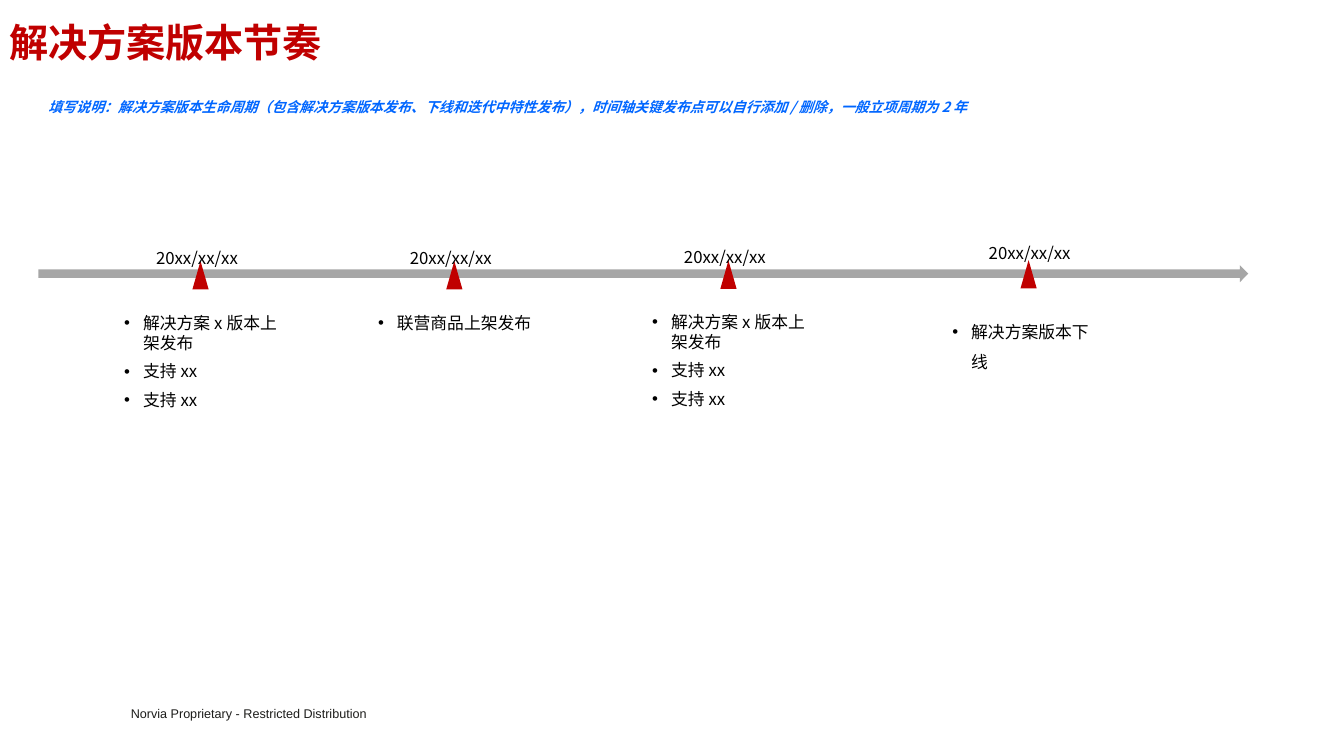
from pptx import Presentation
from pptx import util as u
from pptx.dml.color import RGBColor
from pptx.enum import shapes, text
from pptx.oxml.ns import qn
from lxml import etree

Pt = u.Pt
COLORS = {"red": "C00000", "gray": "A6A6A6", "blue": "0066FF",
          "black": "000000", "ink": "1D1D1B"}
CJK = "Noto Sans CJK SC"
BULLET_INDENT = Pt(13.5)
RELEASE = ["解决方案x版本上架发布", "支持xx", "支持xx"]
WIDE = {"date_dx": -99, "date_w": 193, "list_w": 132.5, "before": 6, "spacing": None}
NARROW = {"date_dx": -49.7, "date_w": 101, "list_w": 121.7, "before": 0, "spacing": 1.5}
MILESTONES = [
    (143.3, 186.5, 171.4, 219.6, RELEASE, WIDE),
    (324.7, 186.5, 171.4, 219.6, ["联营商品上架发布"], WIDE),
    (520.6, 186.1, 170.6, 218.9, RELEASE, WIDE),
    (735.1, 185.8, 167.8, 218.9, ["解决方案版本下线"], NARROW),
]


def add_run(p, words, size, color="black", font=CJK, bold=False, italic=False):
    r = p.add_run()
    r.text = words
    r.font.size = Pt(size)
    r.font.name = font
    r.font.bold = bold
    r.font.italic = italic
    r.font.color.rgb = RGBColor.from_string(COLORS[color])
    ea = etree.SubElement(r._r.get_or_add_rPr(), qn("a:ea"))
    ea.set("typeface", font)


def add_box(s, box, anchor=text.MSO_ANCHOR.TOP, wrap=True):
    tf = s.shapes.add_textbox(*map(Pt, box)).text_frame
    tf.word_wrap = wrap
    tf.vertical_anchor = anchor
    return tf


def add_solid(s, kind, box, color):
    sp = s.shapes.add_shape(kind, *map(Pt, box))
    sp.shadow.inherit = False
    sp.fill.solid()
    sp.fill.fore_color.rgb = RGBColor.from_string(COLORS[color])
    sp.line.fill.background()


def add_title(s, box):
    tf = add_box(s, box, text.MSO_ANCHOR.MIDDLE)
    tf.margin_left = tf.margin_right = Pt(6.5)
    tf.margin_top = tf.margin_bottom = Pt(3)
    p = tf.paragraphs[0]
    p.alignment = text.PP_ALIGN.JUSTIFY
    p.line_spacing = 0.9
    add_run(p, "解决方案版本节奏", 28, "red", bold=True)


def add_hint(s, box):
    tf = add_box(s, box, wrap=False)
    add_run(tf.paragraphs[0],
            "填写说明：解决方案版本生命周期（包含解决方案版本发布、下线和迭代中特性发布），"
            "时间轴关键发布点可以自行添加/删除，一般立项周期为2年",
            10, "blue", bold=True, italic=True)


def add_footer(s, box):
    tf = add_box(s, box)
    add_run(tf.paragraphs[0], "Norvia Proprietary - Restricted Distribution",
            9, "ink", "Arial")


def add_features(s, box, features, before, spacing):
    tf = add_box(s, box)
    for i, feature in enumerate(features):
        p = tf.add_paragraph() if i else tf.paragraphs[0]
        pPr = p._p.get_or_add_pPr()
        pPr.set("marL", str(BULLET_INDENT))
        pPr.set("indent", str(-BULLET_INDENT))
        etree.SubElement(pPr, qn("a:buFont")).set("typeface", "Arial")
        etree.SubElement(pPr, qn("a:buChar")).set("char", "•")
        if i:
            p.space_before = Pt(before)
        if spacing:
            p.line_spacing = spacing
        add_run(p, feature, 12)


def add_milestone(s, x, marker_y, date_y, list_y, features, style):
    add_solid(s, shapes.MSO_SHAPE.ISOSCELES_TRIANGLE, (x - 5.8, marker_y, 11.6, 20.2), "red")
    tf = add_box(s, (x + style["date_dx"], date_y, style["date_w"], 25.2),
                 text.MSO_ANCHOR.MIDDLE)
    tf.paragraphs[0].alignment = text.PP_ALIGN.CENTER
    add_run(tf.paragraphs[0], "20xx/xx/xx", 12)
    add_features(s, (x - 61.6, list_y, style["list_w"], 97.2), features,
                 style["before"], style["spacing"])


def add_timeline(s, box):
    add_solid(s, shapes.MSO_SHAPE.RIGHT_ARROW, box, "gray")
    for milestone in MILESTONES:
        add_milestone(s, *milestone)


def main():
    prs = Presentation()
    prs.slide_width, prs.slide_height = Pt(960.5), Pt(540)
    s = prs.slides.add_slide(prs.slide_layouts[6])
    add_footer(s, (86.4, 500.4, 275.8, 18))
    add_title(s, (0, 1.4, 846, 61.2))
    add_timeline(s, (27.4, 189.4, 864.7, 12.2))
    add_hint(s, (27.4, 67, 681.8, 19.4))
    prs.save("out.pptx")


if __name__ == "__main__":
    main()
